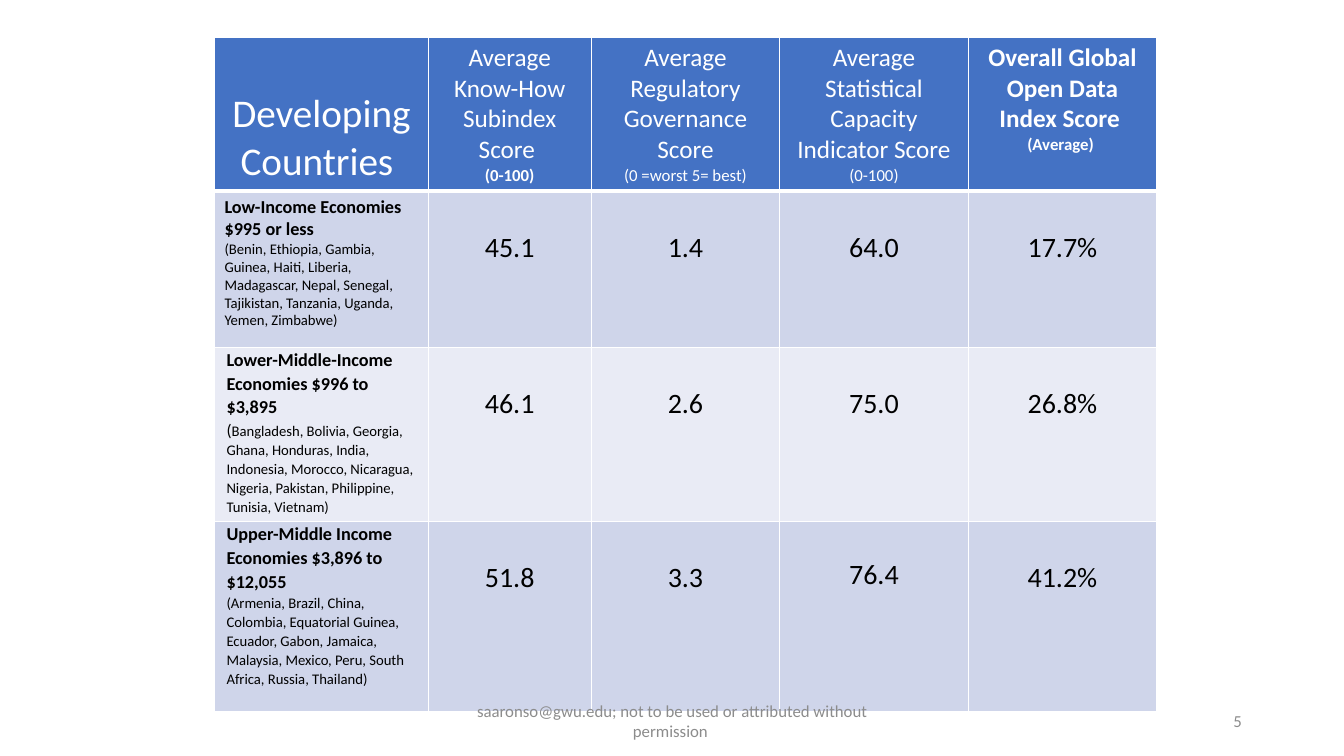
from dataclasses import dataclass

from lxml import etree
from pptx import Presentation
from pptx import util as u
from pptx.dml.color import RGBColor
from pptx.enum import text
from pptx.oxml.ns import qn

CENTER, LEFT, RIGHT = text.PP_ALIGN.CENTER, text.PP_ALIGN.LEFT, text.PP_ALIGN.RIGHT


@dataclass(frozen=True)
class Theme:
    font: str = "Calibri"
    header: str = "4472C4"
    bands: tuple = ("CFD5EA", "E9EBF5")
    white: str = "FFFFFF"
    black: str = "000000"
    grey: str = "8C8C8C"
    corner: float = 28
    value: float = 20
    heading: float = 18
    group: float = 13
    small: float = 12
    countries: float = 10.5


T = Theme()

HEADINGS = [
    ("Average Know-How Subindex Score ", False, "(0-100)", True),
    ("Average Regulatory Governance Score", False, "(0 =worst 5= best)", False),
    ("Average Statistical Capacity Indicator Score", False, "(0-100)", False),
    ("Overall Global Open Data Index Score ", True, "(Average) ", True),
]

# Income group, its countries as (text, size) runs, and its four scores
GROUPS = [
    ("Low-Income Economies $995 or less",
     [("(Benin, Ethiopia, Gambia, Guinea, Haiti, Liberia, Madagascar, Nepal, Senegal, "
       "Tajikistan, Tanzania, Uganda, Yemen, Zimbabwe)", T.countries)],
     ["45.1", "1.4", "64.0", "17.7%"]),
    ("Lower-Middle-Income Economies $996 to $3,895",
     [("(", T.small),
      ("Bangladesh, Bolivia, Georgia, Ghana, Honduras, India, Indonesia, Morocco, "
       "Nicaragua, Nigeria, Pakistan, Philippine, Tunisia, Vietnam)", T.countries)],
     ["46.1", "2.6", "75.0", "26.8%"]),
    ("Upper-Middle Income Economies $3,896 to $12,055",
     [("(Armenia, Brazil, China, Colombia, Equatorial Guinea, Ecuador, Gabon, Jamaica, "
       "Malaysia, Mexico, Peru, South Africa, Russia, Thailand)", T.countries)],
     ["51.8", "3.3", "76.4", "41.2%"]),
]

COLUMNS = [5.38, 4.11, 4.75, 4.75, 4.75]
ROWS = [3.61, 3.94, 4.39, 4.78]


class Deck:
    def __init__(self, theme):
        self.theme = theme
        self.prs = Presentation()
        self.prs.slide_width, self.prs.slide_height = u.Cm(33.87), u.Cm(19.05)
        self.slide = None

    def add_slide(self):
        self.slide = self.prs.slides.add_slide(self.prs.slide_layouts[6])

    def add_text(self, tf, paragraphs, color, align, spacing=None):
        """Fill a frame; each paragraph is a list of (text, size, bold) runs."""
        tf.word_wrap = True
        for i, runs in enumerate(paragraphs):
            p = tf.add_paragraph() if i else tf.paragraphs[0]
            p.alignment = align
            if spacing:
                p.line_spacing = spacing
            for words, size, bold in runs:
                r = p.add_run()
                r.text = words
                r.font.name, r.font.size, r.font.bold = self.theme.font, u.Pt(size), bold
                r.font.color.rgb = RGBColor.from_string(color)

    def table(self, left, top, columns, rows):
        frame = self.slide.shapes.add_table(
            len(rows), len(columns), u.Cm(left), u.Cm(top),
            u.Cm(sum(columns)), u.Cm(sum(rows)))
        for column, width in zip(frame.table.columns, columns):
            column.width = u.Cm(width)
        for row, height in zip(frame.table.rows, rows):
            row.height = u.Cm(height)
        return frame.table

    def cell(self, cell, paragraphs, fill, color, align=CENTER, spacing=None,
             side=0.25, top=0.13, bottom=0.13, rule=1):
        """Style one cell; rule is the width in points of its bottom border."""
        cell.margin_left = cell.margin_right = u.Cm(side)
        cell.margin_top, cell.margin_bottom = u.Cm(top), u.Cm(bottom)
        self.add_text(cell.text_frame, paragraphs, color, align, spacing)
        tc_pr = cell._tc.get_or_add_tcPr()
        for edge, width in (("lnL", 1), ("lnR", 1), ("lnT", 1), ("lnB", rule)):
            line = etree.SubElement(tc_pr, qn(f"a:{edge}"), w=str(u.Pt(width)))
            solid = etree.SubElement(line, qn("a:solidFill"))
            etree.SubElement(solid, qn("a:srgbClr"), val=self.theme.white)
        cell.fill.solid()
        cell.fill.fore_color.rgb = RGBColor.from_string(fill)

    def footer(self, left, width, words, align):
        sp = self.slide.shapes.add_textbox(
            u.Cm(left), u.Cm(17.65), u.Cm(width), u.Cm(1.02))
        sp.text_frame.vertical_anchor = text.MSO_ANCHOR.MIDDLE
        self.add_text(sp.text_frame, [[(words, self.theme.small, False)]],
                      self.theme.grey, align)


def main():
    deck = Deck(T)
    deck.add_slide()
    table = deck.table(5.41, 0.94, COLUMNS, ROWS)

    deck.cell(table.cell(0, 0), [[("Developing Countries ", T.corner, False)]],
              T.header, T.white, top=1.33, rule=3)
    for col, (heading, bold, scale, scale_bold) in enumerate(HEADINGS, 1):
        deck.cell(table.cell(0, col),
                  [[(heading, T.heading, bold)], [(scale, T.small, scale_bold)]],
                  T.header, T.white, rule=3)

    for row, (group, countries, scores) in enumerate(GROUPS, 1):
        fill = T.bands[(row - 1) % 2]
        layout = {} if row == 1 else dict(spacing=1.07, side=0.3, top=0, bottom=0)
        deck.cell(table.cell(row, 0),
                  [[(group, T.group, True)],
                   [(words, size, False) for words, size in countries]],
                  fill, T.black, LEFT, **layout)
        for col, score in enumerate(scores, 1):
            top = 0.9 if score == "76.4" else 0.99
            deck.cell(table.cell(row, col), [[(score, T.value, False)]],
                      fill, T.black, top=top)

    deck.footer(11.23, 11.43, "saaronso@gwu.edu; not to be used or attributed "
                "without permission ", CENTER)
    deck.footer(23.93, 7.62, "5", RIGHT)
    deck.prs.save("out.pptx")


if __name__ == "__main__":
    main()
